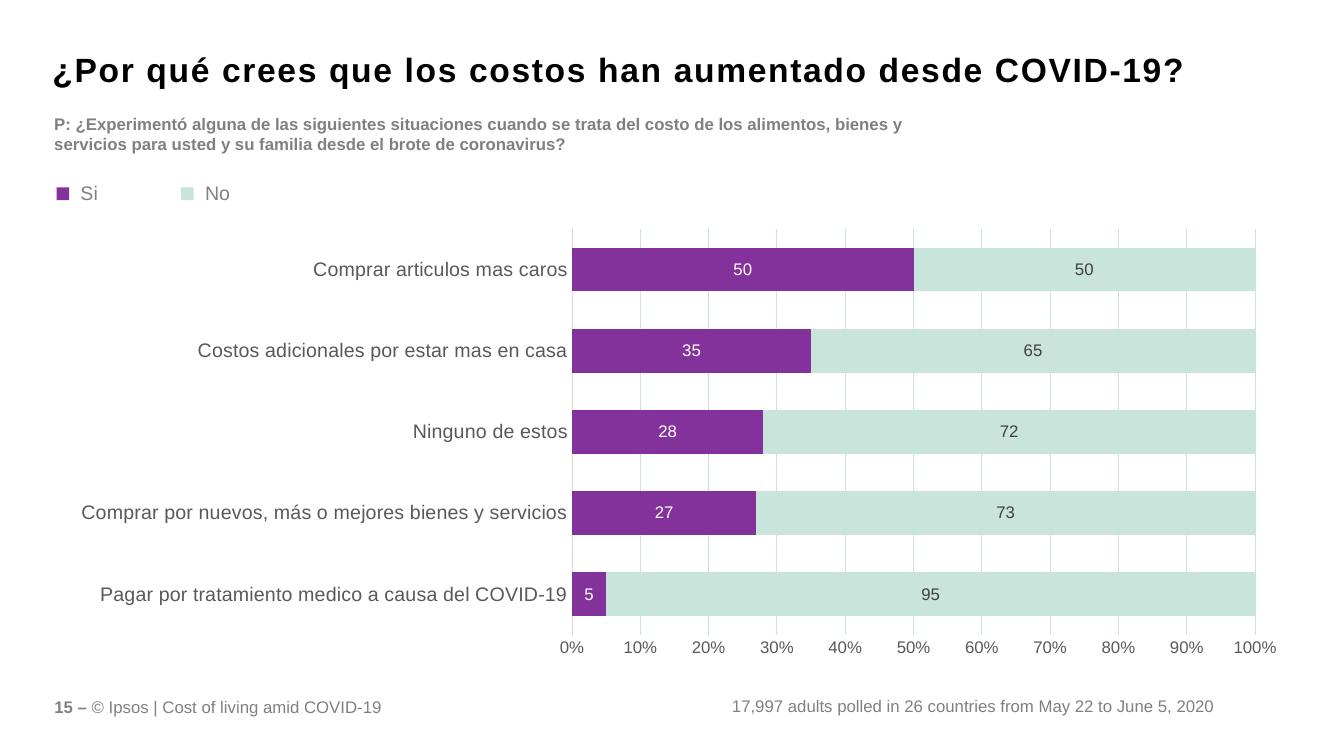
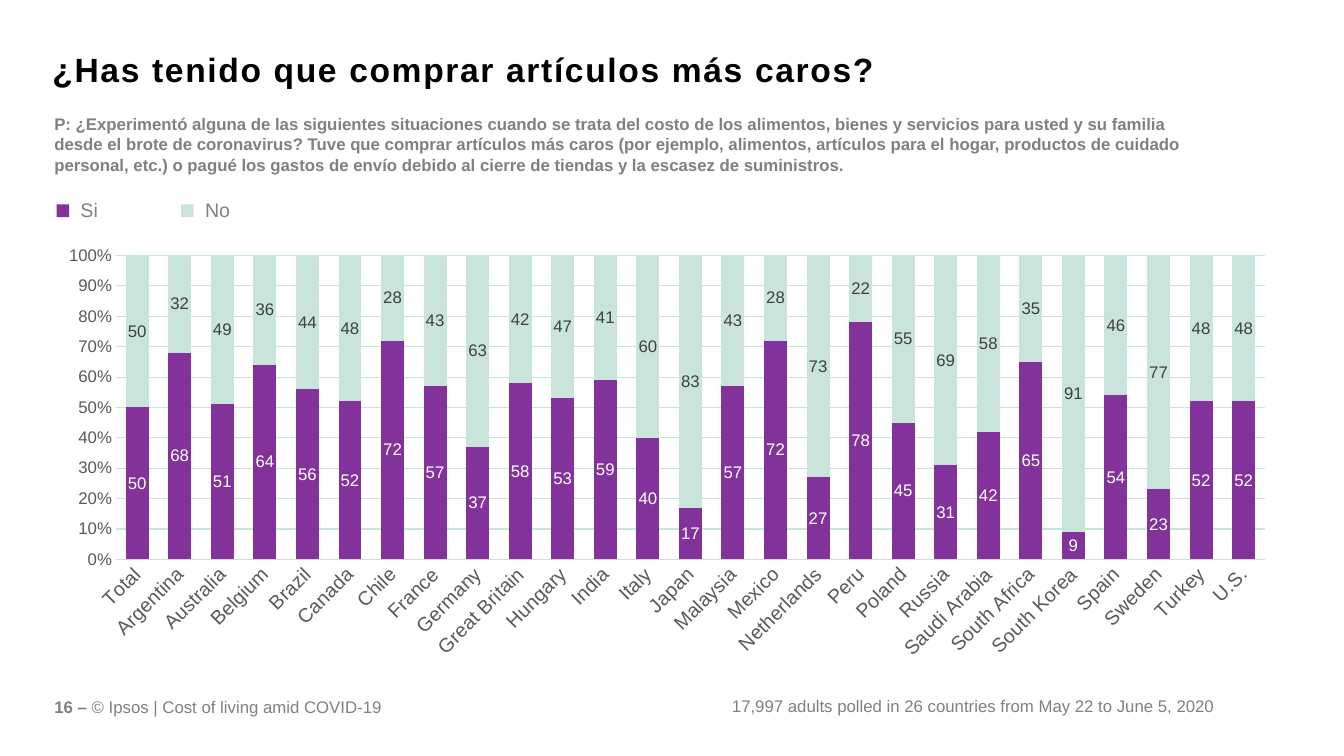
"""Build two slides on costs of living, each with a stacked percent chart."""
import pptx
import pptx.chart.data
import pptx.dml.color
import pptx.enum.chart
import pptx.enum.shapes
import pptx.enum.text
import pptx.oxml
import pptx.oxml.ns
import pptx.util

Pt = pptx.util.Pt
FONT = "Arial"
HUES = {
    "yes": "84329B", "no": "C9E4DB", "title": "000000", "text": "808080",
    "axis": "595959", "line": "D9D9D9", "light": "FFFFFF", "dark": "404040",
}
QUERY = (
    "P: ¿Experimentó alguna de las siguientes situaciones cuando se trata del costo "
    "de los alimentos, bienes y servicios para usted y su familia desde el brote de "
    "coronavirus?"
)
DETAIL = (
    " Tuve que comprar artículos más caros (por ejemplo, alimentos, artículos para el "
    "hogar, productos de cuidado personal, etc.) o pagué los gastos de envío debido al "
    "cierre de tiendas y la escasez de suministros."
)
CAUSES = {
    "Pagar por tratamiento medico a causa del COVID-19": 5,
    "Comprar por nuevos, más o mejores bienes y servicios": 27,
    "Ninguno de estos": 28,
    "Costos adicionales por estar mas en casa": 35,
    "Comprar articulos mas caros": 50,
}
LANDS = {
    "Total": 50, "Argentina": 68, "Australia": 51, "Belgium": 64, "Brazil": 56,
    "Canada": 52, "Chile": 72, "France": 57, "Germany": 37, "Great Britain": 58,
    "Hungary": 53, "India": 59, "Italy": 40, "Japan": 17, "Malaysia": 57,
    "Mexico": 72, "Netherlands": 27, "Peru": 78, "Poland": 45, "Russia": 31,
    "Saudi Arabia": 42, "South Africa": 65, "South Korea": 9, "Spain": 54,
    "Sweden": 23, "Turkey": 52, "U.S.": 52,
}


def tint(name):
    return pptx.dml.color.RGBColor.from_string(HUES[name])


def style(font, size, hue, bold=False):
    font.name = FONT
    font.size = Pt(size)
    font.bold = bold
    font.color.rgb = tint(hue)


def place(shape, box):
    shape.left, shape.top, shape.width, shape.height = (Pt(v) for v in box)


def write(slide, box, parts, size=12, right=False):
    frame = slide.shapes.add_textbox(*(Pt(v) for v in box)).text_frame
    frame.word_wrap = True
    para = frame.paragraphs[0]
    if right:
        para.alignment = pptx.enum.text.PP_ALIGN.RIGHT
    for text, bold in parts:
        run = para.add_run()
        run.text = text
        style(run.font, size, "text", bold)


def head(slide, text):
    title = slide.shapes.title
    place(title, (31.7, 28.8, 889.2, 36.7))
    frame = title.text_frame
    frame.word_wrap = True
    frame.auto_size = pptx.enum.text.MSO_AUTO_SIZE.NONE
    frame.vertical_anchor = pptx.enum.text.MSO_ANCHOR.TOP
    frame.margin_left = frame.margin_right = Pt(5.76)
    frame.margin_top = frame.margin_bottom = Pt(3.6)
    para = frame.paragraphs[0]
    para.alignment = pptx.enum.text.PP_ALIGN.LEFT
    para.line_spacing = 1.1
    para.space_before = Pt(0)
    para.space_after = Pt(6)
    run = para.add_run()
    run.text = text
    style(run.font, 24, "title", True)
    run.font._element.set("spc", "120")


def legend(slide, left, top):
    for i, (text, hue) in enumerate((("Si", "yes"), ("No", "no"))):
        x = left + i * 89
        box = (x, top + 7.9, 9, 9)
        mark = slide.shapes.add_shape(
            pptx.enum.shapes.MSO_SHAPE.RECTANGLE, *(Pt(v) for v in box))
        mark.shadow.inherit = False
        mark.fill.solid()
        mark.fill.fore_color.rgb = tint(hue)
        mark.line.fill.background()
        write(slide, (x + 10, top, 44.6, 24.2), [(text, False)], 14)


def foot(slide, number):
    write(slide, (31.7, 493.9, 272.2, 18),
          [(f"{number} – ", True), ("© Ipsos | Cost of living amid COVID-19", False)])
    write(slide, (493.2, 493.2, 381.6, 21.6),
          [("17,997 adults polled in 26 countries from May 22 to June 5, 2020", False)],
          right=True)


def fix_plot(chart, box, plot):
    area = chart._chartSpace.chart.plotArea
    for old in area.findall(pptx.oxml.ns.qn("c:layout")):
        area.remove(old)
    sizes = (plot[0] / box[2], plot[1] / box[3], plot[2] / box[2], plot[3] / box[3])
    parts = "".join(f'<c:{k} val="{v:.4f}"/>' for k, v in zip("xywh", sizes))
    area.insert(0, pptx.oxml.parse_xml(
        f'<c:layout {pptx.oxml.ns.nsdecls("c")}><c:manualLayout>'
        '<c:layoutTarget val="inner"/><c:xMode val="edge"/><c:yMode val="edge"/>'
        f'{parts}</c:manualLayout></c:layout>'))


def draw(slide, kind, shares, box, plot, turn):
    data = pptx.chart.data.CategoryChartData(number_format="0")
    data.categories = list(shares)
    data.add_series("Series 1", list(shares.values()))
    data.add_series("Series 2", [100 - v for v in shares.values()])
    chart = slide.shapes.add_chart(kind, *(Pt(v) for v in box), data).chart
    chart.has_legend = False
    chart.has_title = False
    style(chart.font, 10, "title")
    fix_plot(chart, box, plot)
    bars = chart.plots[0]
    bars.gap_width = 85
    bars.overlap = 100
    bars.vary_by_categories = False
    for series, hue, ink in zip(bars.series, ("yes", "no"), ("light", "dark")):
        series.format.fill.solid()
        series.format.fill.fore_color.rgb = tint(hue)
        labels = series.data_labels
        labels.show_value = True
        labels.number_format = "0"
        labels.number_format_is_linked = False
        labels.position = pptx.enum.chart.XL_LABEL_POSITION.CENTER
        style(labels.font, 12, ink)
    cats, vals = chart.category_axis, chart.value_axis
    for axis, size in ((cats, 14), (vals, 12)):
        axis.major_tick_mark = pptx.enum.chart.XL_TICK_MARK.NONE
        axis.minor_tick_mark = pptx.enum.chart.XL_TICK_MARK.NONE
        style(axis.tick_labels.font, size, "axis")
    cats.format.line.color.rgb = tint("line")
    cats.format.line.width = Pt(0.75)
    if turn:
        body = cats._element.find(".//" + pptx.oxml.ns.qn("a:bodyPr"))
        body.set("rot", str(turn * 60000))
        body.set("vert", "horz")
    vals.format.line.fill.background()
    vals.minimum_scale, vals.maximum_scale, vals.major_unit = 0, 1, 0.1
    vals.tick_labels.number_format = "0%"
    vals.tick_labels.number_format_is_linked = False
    vals.has_major_gridlines = True
    grid = vals.major_gridlines.format.line
    grid.color.rgb = tint("no")
    grid.width = Pt(0.75)


def build(deck, number, title, query, span, key, chart):
    slide = deck.slides.add_slide(deck.slide_layouts[5])
    head(slide, title)
    draw(slide, *chart)
    legend(slide, 40.4, key)
    write(slide, (31.7, 77.8, *span), [(query, True)])
    foot(slide, number)


def main():
    deck = pptx.Presentation()
    deck.slide_width, deck.slide_height = Pt(960), Pt(540)
    kinds = pptx.enum.chart.XL_CHART_TYPE
    build(deck, 15, "¿Por qué crees que los costos han aumentado desde COVID-19?",
          QUERY, (636.5, 36), 126,
          (kinds.BAR_STACKED_100, CAUSES, (40.3, 157.7, 889.2, 317.5),
           (368.3, 5.9, 487.9, 290), 0))
    build(deck, 16, "¿Has tenido que comprar artículos más caros?",
          QUERY + DETAIL, (843.1, 51.1), 138.2,
          (kinds.COLUMN_STACKED_100, LANDS, (31.7, 169.9, 889.2, 306.7),
           (51.1, 12.6, 820.7, 217.1), -45))
    deck.save("out.pptx")


if __name__ == "__main__":
    main()
